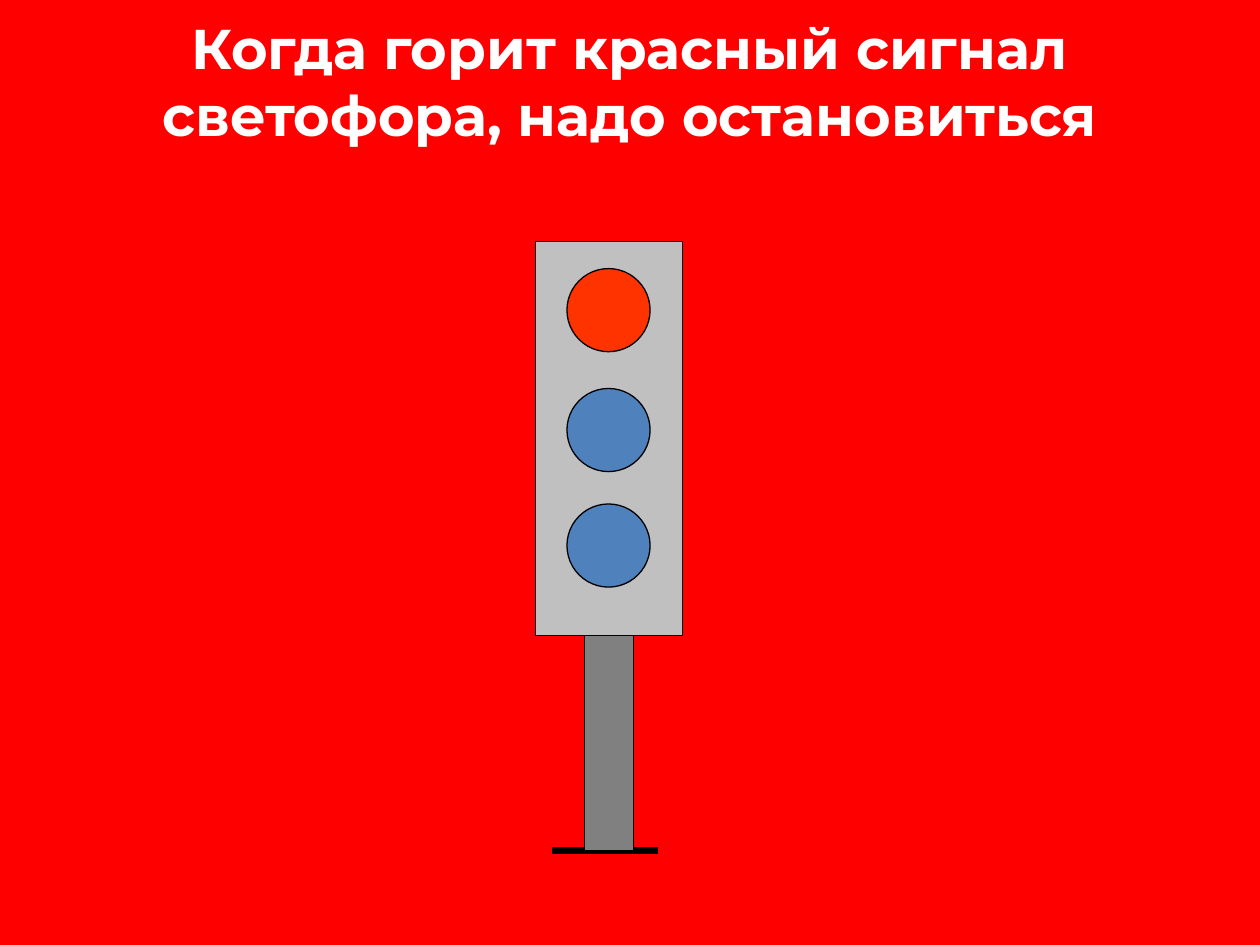
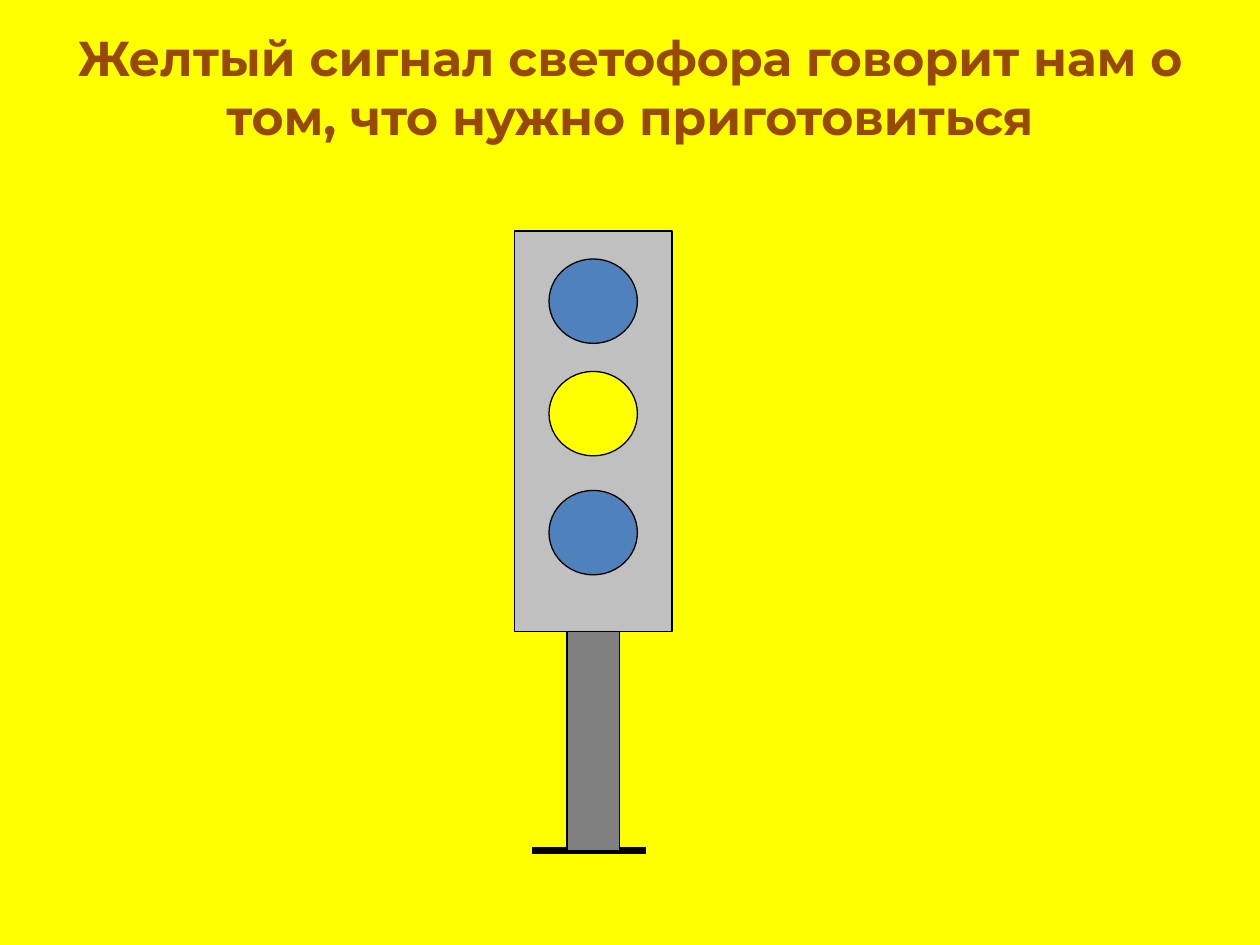
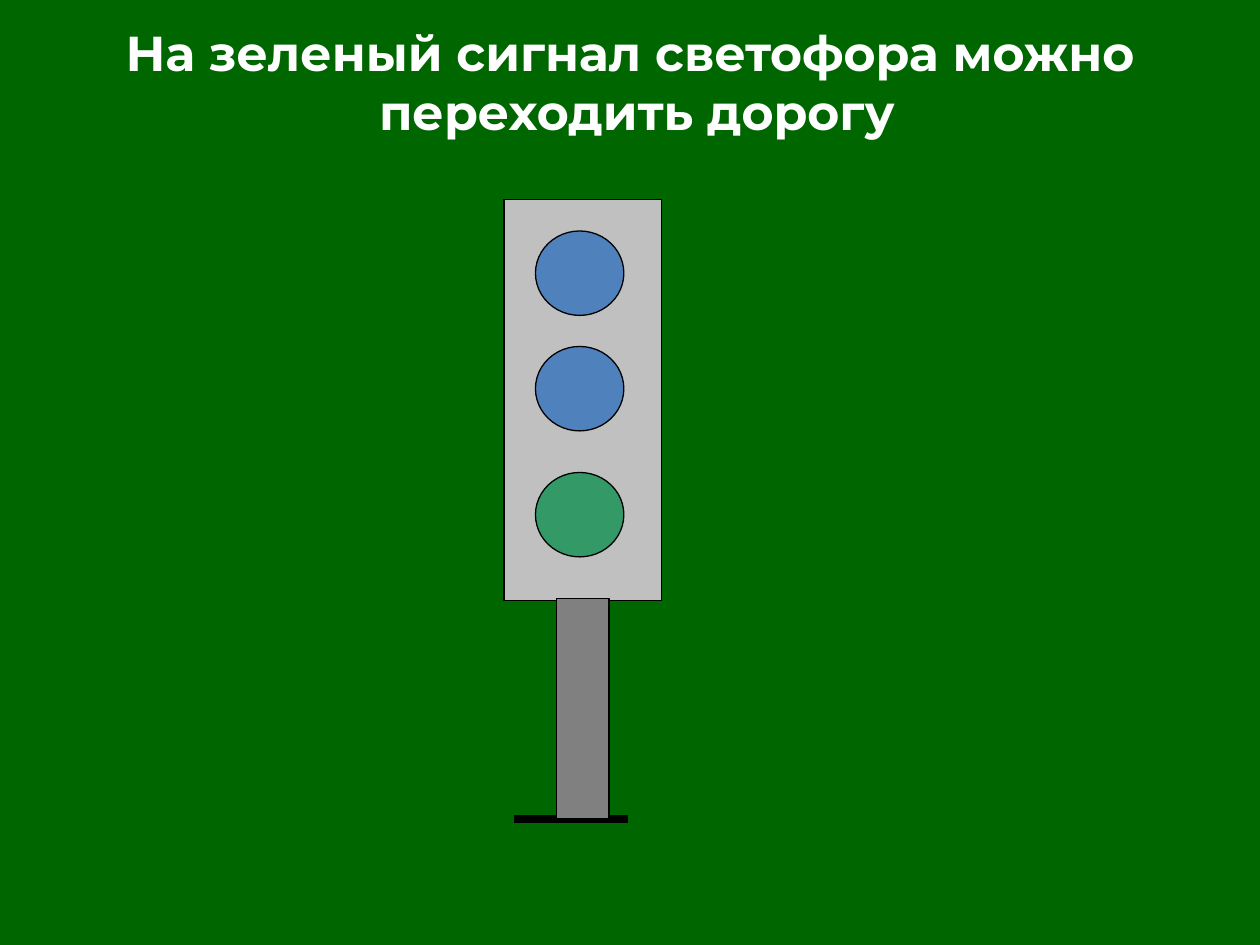
from dataclasses import dataclass

from lxml import etree
from pptx import Presentation
from pptx.dml.color import RGBColor
from pptx.enum.shapes import MSO_CONNECTOR, MSO_SHAPE
from pptx.enum.text import MSO_ANCHOR, PP_ALIGN
from pptx.oxml.ns import qn
from pptx.util import Pt

COLORS = {
    "stop": "FF0000",
    "wait": "FFFF00",
    "go": "006600",
    "red lamp": "FF3300",
    "yellow lamp": "FFFF00",
    "green lamp": "339966",
    "unlit lamp": "4F81BD",
    "housing": "C0C0C0",
    "pole": "808080",
    "outline": "000000",
    "white": "FFFFFF",
    "brown": "984807",
}


@dataclass
class TrafficLight:
    housing: tuple
    lamp_left: float
    lamp_size: tuple
    lamp_tops: tuple
    lit: int
    lit_color: str
    pole_top: float
    ground: float
    base_left: float
    base_width: float


class Deck:
    font = "Montserrat"
    outline_width = Pt(0.75)
    base_thickness = Pt(4.5)

    def __init__(self):
        self.presentation = Presentation()
        self.presentation.slide_width = Pt(720)
        self.presentation.slide_height = Pt(540)
        self.slide = None

    @staticmethod
    def color(name):
        return RGBColor.from_string(COLORS[name])

    def new_slide(self, background):
        self.slide = self.presentation.slides.add_slide(self.presentation.slide_layouts[6])
        fill = self.slide.background.fill
        fill.solid()
        fill.fore_color.rgb = self.color(background)

    def title(self, lines, box, size, color):
        frame = self.slide.shapes.add_textbox(*map(Pt, box)).text_frame
        frame.word_wrap = True
        frame.margin_left = frame.margin_right = 0
        frame.vertical_anchor = MSO_ANCHOR.MIDDLE
        paragraph = frame.paragraphs[0]
        paragraph.alignment = PP_ALIGN.CENTER
        for index, line in enumerate(lines):
            if index:
                paragraph.add_line_break()
            run = paragraph.add_run()
            run.text = line
            run.font.name = self.font
            run.font.size = Pt(size)
            run.font.bold = True
            run.font.color.rgb = self.color(color)

    def outlined(self, preset, box, color):
        part = self.slide.shapes.add_shape(preset, *map(Pt, box))
        part.shadow.inherit = False
        part.fill.solid()
        part.fill.fore_color.rgb = self.color(color)
        part.line.color.rgb = self.color("outline")
        part.line.width = self.outline_width

    def base(self, left, width, ground):
        bar = self.slide.shapes.add_connector(
            MSO_CONNECTOR.STRAIGHT, Pt(left + width), Pt(ground), Pt(left), Pt(ground))
        bar.line.color.rgb = self.color("outline")
        bar.line.width = self.base_thickness
        etree.SubElement(bar._element.spPr, qn("a:effectLst"))

    def traffic_light(self, light):
        left, _, width, _ = light.housing
        self.outlined(MSO_SHAPE.RECTANGLE, light.housing, "housing")
        for index, top in enumerate(light.lamp_tops):
            color = light.lit_color if index == light.lit else "unlit lamp"
            self.outlined(MSO_SHAPE.OVAL, (light.lamp_left, top, *light.lamp_size), color)
        self.base(light.base_left, light.base_width, light.ground)
        # The pole is the middle third of the housing.
        pole = (left + width / 3, light.pole_top, width / 3, light.ground - light.pole_top)
        self.outlined(MSO_SHAPE.RECTANGLE, pole, "pole")


def main():
    deck = Deck()

    deck.new_slide("stop")
    deck.title(["Когда горит красный сигнал светофора, надо остановиться"],
               (24, 12, 672, 68.5), 32, "white")
    deck.traffic_light(TrafficLight(
        housing=(306, 138, 84, 225), lamp_left=324, lamp_size=(47.5, 47.5),
        lamp_tops=(153.5, 222, 288), lit=0, lit_color="red lamp",
        pole_top=363, ground=486, base_left=315.5, base_width=60.5))

    deck.new_slide("wait")
    deck.title(["Желтый сигнал светофора говорит нам о том, что нужно приготовиться"],
               (36, 21.5, 648, 56), 28, "brown")
    deck.traffic_light(TrafficLight(
        housing=(294, 132, 90, 229), lamp_left=313.75, lamp_size=(50.5, 48.25),
        lamp_tops=(148, 212.25, 280.25), lit=1, lit_color="yellow lamp",
        pole_top=361, ground=486, base_left=304, base_width=65))

    deck.new_slide("go")
    deck.title(["На зеленый сигнал светофора можно", " переходить дорогу"],
               (36, 21.5, 648, 50.5), 28, "white")
    deck.traffic_light(TrafficLight(
        housing=(288, 114, 90, 229), lamp_left=306, lamp_size=(50.5, 48.25),
        lamp_tops=(132, 198, 270), lit=2, lit_color="green lamp",
        pole_top=342, ground=468, base_left=294, base_width=65))

    deck.presentation.save("out.pptx")


if __name__ == "__main__":
    main()
